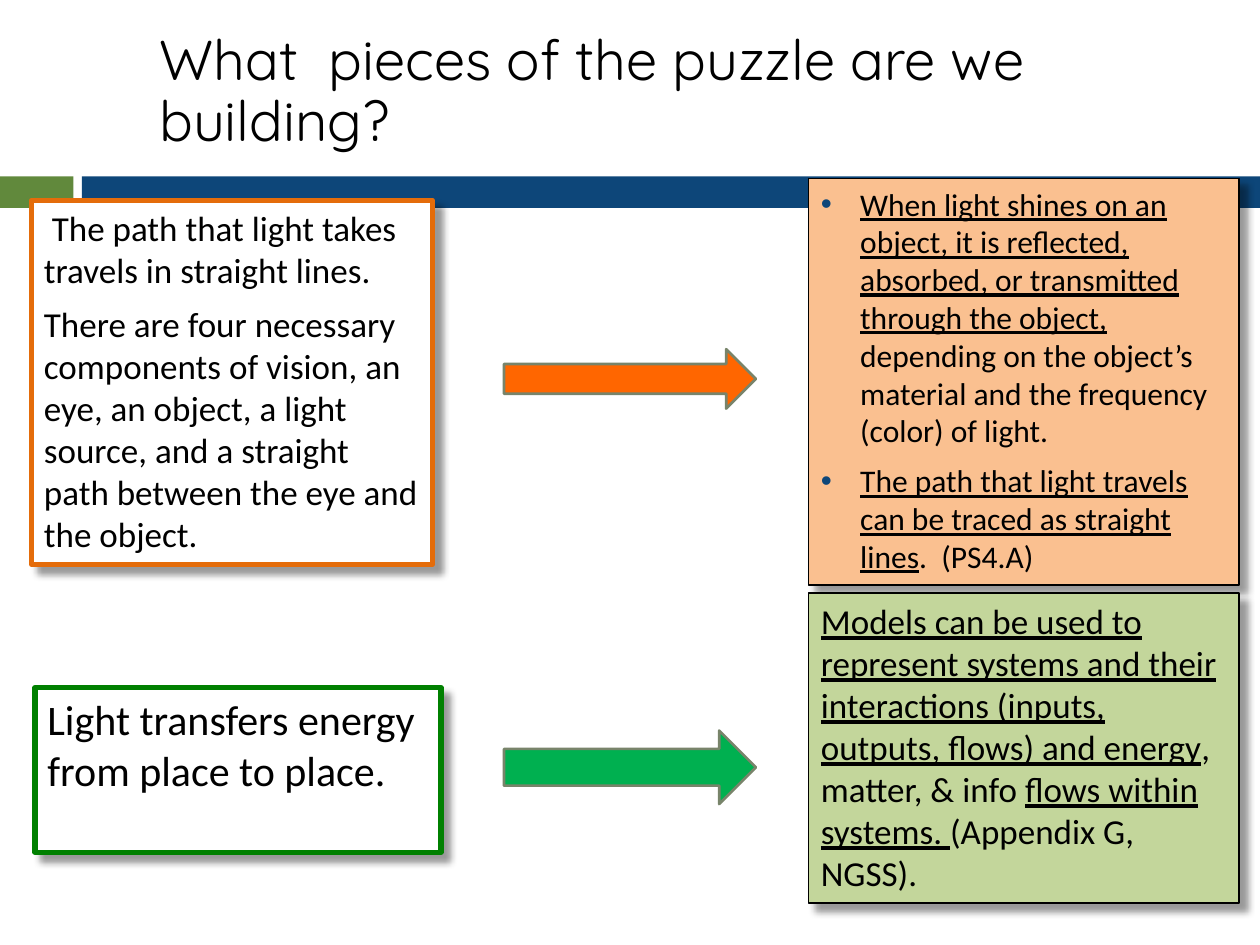
from lxml.etree import SubElement
from pptx import Presentation
from pptx.dml.color import RGBColor
from pptx.enum.shapes import MSO_SHAPE
from pptx.enum.text import MSO_ANCHOR, PP_ALIGN
from pptx.oxml.ns import qn
from pptx.util import Pt

BLACK = RGBColor(0x00, 0x00, 0x00)
WHITE = RGBColor(0xFF, 0xFF, 0xFF)
OLIVE = RGBColor(0x61, 0x89, 0x3C)
NAVY = RGBColor(0x0D, 0x46, 0x79)
ORANGE = RGBColor(0xE4, 0x6C, 0x0A)
GREEN = RGBColor(0x00, 0x80, 0x00)
PEACH = RGBColor(0xFA, 0xC0, 0x90)
LIME = RGBColor(0xC3, 0xD6, 0x9B)
ARROW_ORANGE = RGBColor(0xFF, 0x66, 0x00)
ARROW_GREEN = RGBColor(0x00, 0xB0, 0x50)
ARROW_LINE = RGBColor(0x78, 0x84, 0x6A)


def add_shape(s, kind, box, fill, line=None, width=0):
    sp = s.shapes.add_shape(kind, *[Pt(v) for v in box])
    sp.shadow.inherit = False
    sp.fill.solid()
    sp.fill.fore_color.rgb = fill
    if line is None:
        sp.line.fill.background()
    else:
        sp.line.color.rgb = line
        sp.line.width = Pt(width)
    return sp


def add_bullet(p):
    pPr = p._p.get_or_add_pPr()
    pPr.set("marL", str(Pt(22.5)))
    pPr.set("indent", str(Pt(-22.5)))
    clr = SubElement(pPr, qn("a:buClr"))
    SubElement(clr, qn("a:srgbClr"), val=str(NAVY))
    SubElement(pPr, qn("a:buFont"), typeface="Arial")
    SubElement(pPr, qn("a:buChar"), char="•")


prs = Presentation()
prs.slide_width, prs.slide_height = Pt(720), Pt(540)
s = prs.slides.add_slide(prs.slide_layouts[6])

add_shape(s, MSO_SHAPE.RECTANGLE, (0, 100.8, 42, 18), OLIVE)
add_shape(s, MSO_SHAPE.RECTANGLE, (46.8, 100.8, 673.2, 18), NAVY)

title = s.shapes.add_textbox(Pt(84), Pt(16.5), Pt(636), Pt(73))
tf = title.text_frame
tf.word_wrap = True
tf.vertical_anchor = MSO_ANCHOR.MIDDLE
tf.text = "What  pieces of the puzzle are we building?"
p = tf.paragraphs[0]
p.line_spacing = 0.9
r = p.runs[0]
r.font.name = "Quicksand"
r.font.size = Pt(32)
r.font.color.rgb = BLACK

for top, height, fill in [(199.5, 34, ARROW_ORANGE), (417.5, 42, ARROW_GREEN)]:
    add_shape(s, MSO_SHAPE.RIGHT_ARROW, (288, top, 144, height), fill, ARROW_LINE, 1.5)

cards = [
    ((18, 114.5, 229, 208), WHITE, ORANGE, 3, 20, False, [
        [(" The path that light takes travels in straight lines.", False)],
        [("There are four necessary components of vision, an eye, an object, a light "
          "source, and a straight path between the eye and the object.", False)],
    ]),
    ((20, 393, 232, 94), WHITE, GREEN, 3, 24, False, [
        [("Light transfers energy from place to place.", False)],
    ]),
    ((462, 102, 246, 232.5), PEACH, BLACK, 1, 18, True, [
        [("When light shines on an object, it is reflected, absorbed, or transmitted "
          "through the object, ", True),
         ("depending on the object’s material and the frequency (color) of light.", False)],
        [("The path that light travels can be traced as straight lines", True),
         (".  (PS4.A)", False)],
    ]),
    ((462, 339, 246, 177), LIME, BLACK, 1, 20, False, [
        [("Models can be used to represent systems and their interactions (inputs, "
          "outputs, flows) and energy", True),
         (", matter, & info ", False),
         ("flows within systems. ", True),
         ("(Appendix G, NGSS).", False)],
    ]),
]

for box, fill, line, width, size, bulleted, paragraphs in cards:
    sp = add_shape(s, MSO_SHAPE.RECTANGLE, box, fill, line, width)
    effects = sp._element.spPr.find(qn("a:effectLst"))
    shadow = SubElement(effects, qn("a:outerShdw"), blurRad=str(Pt(4)), dist=str(Pt(6)),
                        dir="2700000", algn="tl", rotWithShape="0")
    clr = SubElement(shadow, qn("a:srgbClr"), val=str(BLACK))
    SubElement(clr, qn("a:alpha"), val="40000")
    tf = sp.text_frame
    tf.word_wrap = True
    tf.vertical_anchor = MSO_ANCHOR.TOP
    for i, runs in enumerate(paragraphs):
        p = tf.add_paragraph() if i else tf.paragraphs[0]
        if bulleted:
            add_bullet(p)
        p.alignment = PP_ALIGN.LEFT
        if i:
            p.space_before = Pt(7)
        for text, underlined in runs:
            r = p.add_run()
            r.text = text
            r.font.name = "Calibri"
            r.font.size = Pt(size)
            r.font.color.rgb = BLACK
            r.font.underline = underlined

prs.save("out.pptx")
